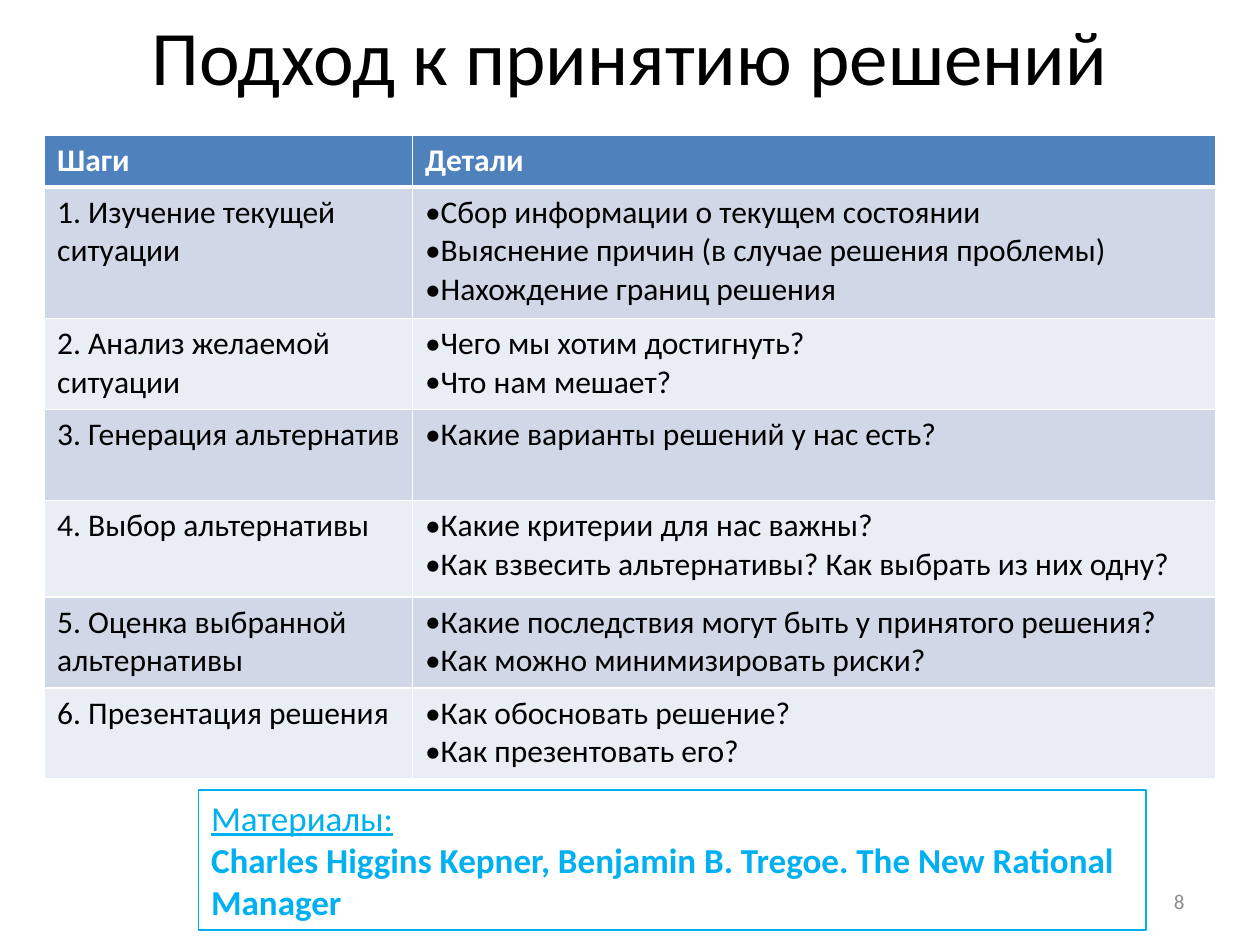
from dataclasses import dataclass
from typing import Optional

from lxml.etree import SubElement
from pptx import Presentation
from pptx.dml.color import RGBColor
from pptx.enum.shapes import MSO_SHAPE as Shape
from pptx.enum.text import MSO_ANCHOR as Anchor, PP_ALIGN as Align
from pptx.oxml.ns import qn
from pptx.util import Pt

FONT = "Calibri"
BLACK = RGBColor(0x00, 0x00, 0x00)
WHITE = RGBColor(0xFF, 0xFF, 0xFF)
GREY = RGBColor(0x8C, 0x8C, 0x8C)
CYAN = RGBColor(0x00, 0xB0, 0xF0)
HEADER = RGBColor(0x4F, 0x81, 0xBD)
BANDS = (RGBColor(0xD0, 0xD8, 0xE8), RGBColor(0xE9, 0xED, 0xF4))


@dataclass(frozen=True)
class Box:
    left: float
    top: float
    width: float
    height: float

    def emu(self) -> tuple:
        return Pt(self.left), Pt(self.top), Pt(self.width), Pt(self.height)


@dataclass(frozen=True)
class Style:
    size: float
    color: RGBColor
    bold: bool = False
    underline: bool = False
    align: Align = Align.LEFT
    bullet: Optional[str] = None


@dataclass(frozen=True)
class Step:
    name: str
    details: tuple[str, ...]
    height: float = 52.1


STEPS = (
    Step("1. Изучение текущей ситуации", (
        "Сбор информации о текущем состоянии",
        "Выяснение причин (в случае решения проблемы)",
        "Нахождение границ решения"), 75),
    Step("2. Анализ желаемой ситуации", (
        "Чего мы хотим достигнуть?", "Что нам мешает?")),
    Step("3. Генерация альтернатив", ("Какие варианты решений у нас есть?",)),
    Step("4. Выбор альтернативы", (
        "Какие критерии для нас важны?",
        "Как взвесить альтернативы? Как выбрать из них одну?"), 55),
    Step("5. Оценка выбранной альтернативы", (
        "Какие последствия могут быть у принятого решения?",
        "Как можно минимизировать риски?")),
    Step("6. Презентация решения", (
        "Как обосновать решение?", "Как презентовать его?")),
)
COLUMNS = (210.2, 458.9)
HEADER_HEIGHT = 29.6

HEAD = Style(18, WHITE, bold=True)
BODY = Style(18, BLACK)
POINT = Style(18, BLACK, bullet="•")


def write(tf, *lines: tuple[str, Style]) -> None:
    tf.word_wrap = True
    for i, (text, style) in enumerate(lines):
        p = tf.add_paragraph() if i else tf.paragraphs[0]
        p.text = text
        p.alignment = style.align
        if style.bullet:
            props = p._p.get_or_add_pPr()
            SubElement(props, qn("a:buFont"), typeface=FONT)
            SubElement(props, qn("a:buChar"), char=style.bullet)
        p.font.name = FONT
        p.font.size = Pt(style.size)
        p.font.bold = style.bold
        p.font.underline = style.underline
        p.font.color.rgb = style.color


def add_label(s, box: Box, text: str, style: Style) -> None:
    tf = s.shapes.add_textbox(*box.emu()).text_frame
    tf.vertical_anchor = Anchor.MIDDLE
    write(tf, (text, style))


def add_borders(cell, bottom: float) -> None:
    props = cell._tc.get_or_add_tcPr()
    for side, width in (("L", 1), ("R", 1), ("T", 1), ("B", bottom)):
        line = SubElement(props, qn(f"a:ln{side}"), w=str(Pt(width)))
        fill = SubElement(line, qn("a:solidFill"))
        SubElement(fill, qn("a:srgbClr"), val=str(WHITE))


def fill_row(table, row: int, color: RGBColor, height: float,
             *cells: list[tuple[str, Style]]) -> None:
    table.rows[row].height = Pt(height)
    for col, lines in enumerate(cells):
        cell = table.cell(row, col)
        if row == 0:
            add_borders(cell, bottom=3)
        cell.fill.solid()
        cell.fill.fore_color.rgb = color
        props = cell._tc.get_or_add_tcPr()
        props.append(props.find(qn("a:solidFill")))
        write(cell.text_frame, *lines)


def add_steps(s, left: float, top: float) -> None:
    height = HEADER_HEIGHT + sum(step.height for step in STEPS)
    box = Box(left, top, sum(COLUMNS), height)
    table = s.shapes.add_table(len(STEPS) + 1, len(COLUMNS), *box.emu()).table
    for column, width in zip(table.columns, COLUMNS):
        column.width = Pt(width)
    fill_row(table, 0, HEADER, HEADER_HEIGHT, [("Шаги", HEAD)], [("Детали", HEAD)])
    for i, step in enumerate(STEPS):
        fill_row(table, i + 1, BANDS[i % 2], step.height, [(step.name, BODY)],
                 [(detail, POINT) for detail in step.details])


def add_materials(s, box: Box) -> None:
    sp = s.shapes.add_shape(Shape.RECTANGLE, *box.emu())
    sp.shadow.inherit = False
    sp.fill.background()
    sp.line.color.rgb = CYAN
    sp.line.width = Pt(1)
    sp.text_frame.vertical_anchor = Anchor.TOP
    write(sp.text_frame,
          ("Материалы:", Style(20, CYAN, underline=True)),
          ("Charles Higgins Kepner, Benjamin B. Tregoe. The New Rational Manager",
           Style(20, CYAN, bold=True)))


def main() -> None:
    prs = Presentation()
    prs.slide_width, prs.slide_height = Pt(720), Pt(540)
    s = prs.slides.add_slide(prs.slide_layouts[6])
    add_label(s, Box(36, -2.5, 648, 67.7), "Подход к принятию решений",
              Style(44, BLACK, align=Align.CENTER))
    add_label(s, Box(516, 500.5, 168, 28.8), "8",
              Style(12, GREY, align=Align.RIGHT))
    add_steps(s, 25.5, 77.3)
    add_materials(s, Box(113.5, 451.5, 541.5, 80))
    prs.save("out.pptx")


if __name__ == "__main__":
    main()
